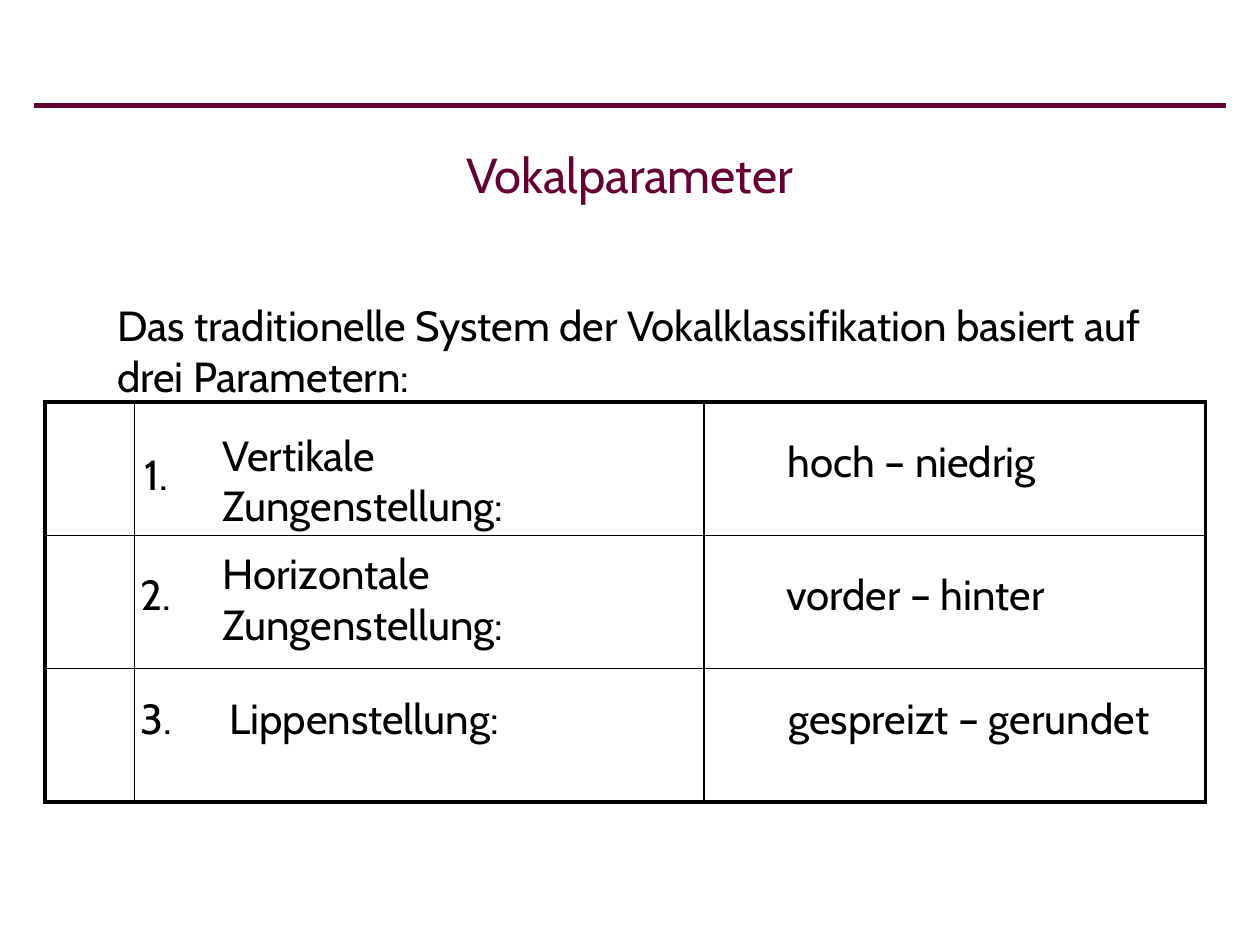
from lxml.etree import SubElement
from pptx import Presentation
from pptx.dml.color import RGBColor
from pptx.enum.shapes import MSO_CONNECTOR as Connector
from pptx.enum.text import MSO_ANCHOR as Anchor, MSO_AUTO_SIZE as AutoSize, PP_ALIGN as Align
from pptx.oxml.ns import qn
from pptx.util import Cm, Pt

BURGUNDY = RGBColor(0x66, 0x00, 0x33)
BLACK = RGBColor(0x00, 0x00, 0x00)
FONT = "Cabin"
THIN, THICK = Pt(1), Pt(2.25)
COLUMN_WIDTHS = (1.8, 11.48, 10.11)
ROW_COUNT, ROW_HEIGHT = 3, 2.69
NUMBER_LEFT, LABEL_LEFT, VALUE_LEFT = 2.54, 4.24, 15.42
NUMBER_WIDTH, LINE_HEIGHT, TWO_LINES_HEIGHT = 1.22, 1.27, 2.29

VALUES = [
    ("hoch – niedrig ", 8.66, 6.1),
    ("vorder – hinter", 11.33, 6.07),
    ("gespreizt – gerundet", 13.84, 8.23),
]
PARAMETERS = [
    ("1.", 8.92, "Vertikale\nZungenstellung:", 8.53, 7.32, Align.LEFT),
    ("2.", 11.33, "Horizontale\nZungenstellung:", 10.92, 6.78, Align.LEFT),
    ("3.", 13.84, "Lippenstellung:", 13.84, 6.2, Align.CENTER),
]


def add_rule(slide, left, top, right):
    rule = slide.shapes.add_connector(
        Connector.STRAIGHT, Cm(left), Cm(top), Cm(right), Cm(top))
    rule.line.color.rgb = BURGUNDY
    rule.line.width = Pt(3)
    SubElement(rule._element.spPr, qn("a:effectLst"))


def add_text(shapes, text, left, top, width, height, align=Align.LEFT,
             wrap=False, size=24, color=BLACK):
    box = shapes.add_textbox(Cm(left), Cm(top), Cm(width), Cm(height))
    frame = box.text_frame
    frame.word_wrap = wrap
    frame.auto_size = AutoSize.SHAPE_TO_FIT_TEXT
    paragraph = frame.paragraphs[0]
    paragraph.alignment = align
    for index, line in enumerate(text.split("\n")):
        if index:
            paragraph.add_line_break()
        run = paragraph.add_run()
        run.text = line
        run.font.name = FONT
        run.font.size = Pt(size)
        run.font.color.rgb = color
    return box


def add_title(slide, text):
    title = add_text(slide.shapes, text, 0.69, 2.13, 24, 2.74,
                     Align.CENTER, True, 28, BURGUNDY)
    title.text_frame.auto_size = AutoSize.NONE
    title.text_frame.vertical_anchor = Anchor.MIDDLE


def set_borders(cell, widths):
    properties = cell._tc.get_or_add_tcPr()
    for side, width in zip("LRTB", widths):
        line = SubElement(properties, qn(f"a:ln{side}"), w=str(width))
        fill = SubElement(line, qn("a:solidFill"))
        SubElement(fill, qn("a:srgbClr"), val=str(BLACK))


def add_grid(slide, left, top):
    column_count = len(COLUMN_WIDTHS)
    table = slide.shapes.add_table(
        ROW_COUNT, column_count, Cm(left), Cm(top),
        Cm(sum(COLUMN_WIDTHS)), Cm(ROW_COUNT * ROW_HEIGHT)).table
    table.first_row = table.horz_banding = False
    for column, width in zip(table.columns, COLUMN_WIDTHS):
        column.width = Cm(width)
    for row_index, row in enumerate(table.rows):
        row.height = Cm(ROW_HEIGHT)
        for column_index, cell in enumerate(row.cells):
            outer_sides = (column_index == 0, column_index == column_count - 1,
                           row_index == 0, row_index == ROW_COUNT - 1)
            set_borders(cell, [THICK if outer else THIN for outer in outer_sides])
            cell.fill.background()


def add_parameter(slide, number, number_top, label, label_top, label_width, align):
    group = slide.shapes.add_group_shape()
    label_height = TWO_LINES_HEIGHT if "\n" in label else LINE_HEIGHT
    add_text(group.shapes, label, LABEL_LEFT, label_top, label_width, label_height, align)
    add_text(group.shapes, number, NUMBER_LEFT, number_top,
             NUMBER_WIDTH, LINE_HEIGHT, Align.CENTER)


def main():
    presentation = Presentation()
    presentation.slide_width, presentation.slide_height = Cm(25.4), Cm(19.05)
    slide = presentation.slides.add_slide(presentation.slide_layouts[6])
    add_rule(slide, 0.69, 2.13, 24.71)
    add_title(slide, "Vokalparameter")
    add_grid(slide, 0.91, 8.1)
    add_text(slide.shapes,
             "Das traditionelle System der Vokalklassifikation basiert auf drei Parametern:",
             2.11, 5.92, 21.64, TWO_LINES_HEIGHT, wrap=True)
    for text, top, width in VALUES:
        add_text(slide.shapes, text, VALUE_LEFT, top, width, LINE_HEIGHT, Align.CENTER)
    for parameter in PARAMETERS:
        add_parameter(slide, *parameter)
    presentation.save("out.pptx")


if __name__ == "__main__":
    main()
